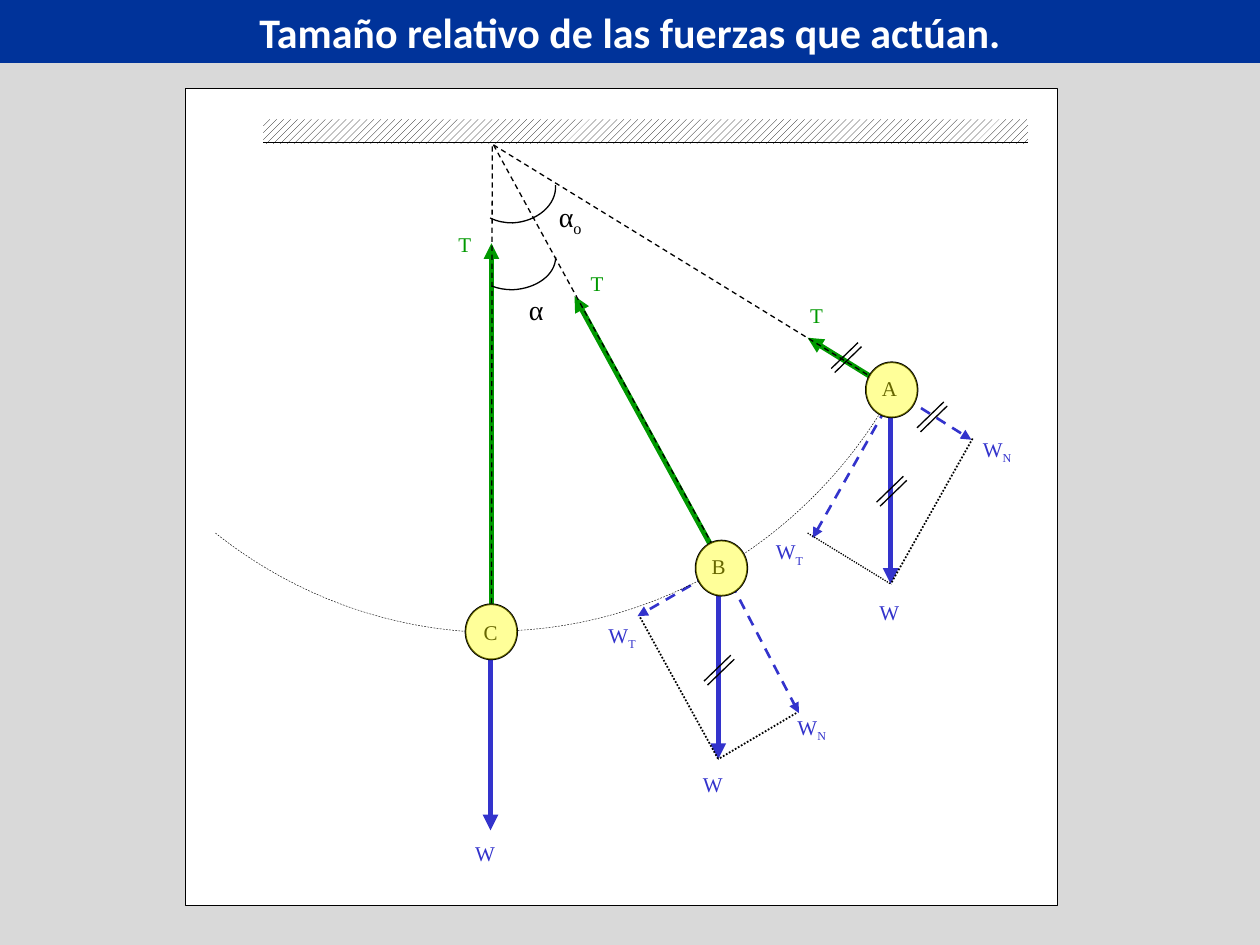
from copy import deepcopy
from dataclasses import dataclass

from lxml import etree
from pptx import Presentation
from pptx import util as u
from pptx.dml.color import RGBColor
from pptx.enum import dml, shapes, text
from pptx.oxml.ns import qn

COLORS = {
    "background": "D9D9D9",
    "banner": "00339A",
    "paper": "FFFFFF",
    "ink": "000000",
    "weight": "3333CC",
    "tension": "009900",
    "ball": "FFFF00",
}
SERIF = "Times New Roman"
DASH = dml.MSO_LINE.DASH
DOT = dml.MSO_LINE.ROUND_DOT
Point = tuple[float, float]


@dataclass
class Segment:
    start: Point
    end: Point
    color: str = "ink"
    width: float = 0.75
    dash: dml.MSO_LINE | None = None
    arrow: bool = False


@dataclass
class Label:
    left: float
    top: float
    base: str
    color: str
    subscript: str = ""
    size: float = 12


@dataclass
class Ball:
    left: float
    top: float
    label: Label


@dataclass
class Sector:
    apex: Point
    arc: list[Point]
    width: float = 0.75
    dash: dml.MSO_LINE | None = None


def force(start: Point, end: Point, color: str) -> Segment:
    return Segment(start, end, color, 3, arrow=True)


def component(start: Point, end: Point) -> Segment:
    return Segment(start, end, "weight", 1.5, DASH, True)


PIVOT = (282, 82.8)
A, B, C = (508.5, 222), (413, 324), (280.8, 360)
TIP_A, TIP_B = (509, 333.7), (410.4, 433.8)

FORCES = [
    force((509, 222.5), TIP_A, "weight"),
    force((410.4, 325.4), TIP_B, "weight"),
    force((280.3, 362), (280.3, 474.5), "weight"),
    force(A, (461.5, 193), "tension"),
    force(B, (328.3, 169.2), "tension"),
    force(C, (280.8, 139), "tension"),
    component(A, (555.1, 251.3)),
    component((511.2, 224.6), (464.4, 307.4)),
    component(B, (456.5, 407.5)),
    component(B, (364.3, 352.1)),
]
GUIDES = [
    Segment((461.5, 304.6), TIP_A, dash=DOT),
    Segment((555.8, 250.6), TIP_A, width=1, dash=DOT),
    Segment((455, 407.5), TIP_B, width=1, dash=DOT),
    Segment((365.8, 352.8), TIP_B, width=1, dash=DOT),
    Segment(PIVOT, A, dash=DASH),
    Segment(PIVOT, (414, 324), dash=DASH),
    Segment(C, (281.3, 82.8), dash=DASH),
    Segment((150.5, 81.4), (587.5, 81.4)),
]
LABELS = [
    Label(495.4, 339.1, "W", "weight"),
    Label(394.6, 437.3, "W", "weight"),
    Label(264.4, 476.6, "W", "weight"),
    Label(436.3, 304.4, "W", "weight", "T"),
    Label(554.6, 245.8, "W", "weight", "N"),
    Label(448.6, 404.6, "W", "weight", "N"),
    Label(340.6, 352.1, "W", "weight", "T"),
    Label(330.5, 151.2, "T", "tension"),
    Label(254.9, 128.9, "T", "tension"),
    Label(455.8, 169.2, "T", "tension"),
    Label(312.3, 110.7, "α", "ink", "o", 16),
    Label(295.2, 163.4, "α", "ink", size=16),
]
BALLS = [
    Ball(494.8, 207, Label(496.8, 211, "A", "ink")),
    Ball(397.5, 308.9, Label(399.6, 312.5, "B", "ink")),
    Ball(266, 345.3, Label(269.3, 350.6, "C", "ink")),
]
SECTORS = [
    Sector((283.7, 82.1), [(123.1, 304.6), (169.2, 341.3), (226.1, 361.4), (283.7, 361.4)],
           0.25, DASH),
    Sector((281.5, 82.1), [(281.5, 360.7), (375.1, 360.7), (462.2, 308.9), (509.8, 224.6)],
           0.25, DASH),
    Sector((292.3, 106.6), [(317.5, 105.8), (318.2, 117.4), (306.7, 126.7), (293, 127.4),
                            (288.7, 127.4), (284.4, 126.7), (280.1, 124.6)]),
    Sector((293, 147.6), [(317.5, 146.9), (317.5, 157), (306.7, 164.9), (293, 165.6),
                          (288.7, 165.6), (284.4, 164.9), (280.8, 163.4)]),
]
TICKS = [(490.3, 195.8), (539.3, 229.7), (516.2, 272.2), (417.6, 374.4)]


def rgb(name: str) -> RGBColor:
    return RGBColor.from_string(COLORS[name])


def style_line(line, color: str, width: float, dash=None) -> None:
    line.color.rgb = rgb(color)
    line.width = u.Pt(width)
    if dash is not None:
        line.dash_style = dash


def draw_segment(slide, segment: Segment) -> None:
    ends = [u.Pt(value) for value in (*segment.start, *segment.end)]
    connector = slide.shapes.add_connector(shapes.MSO_CONNECTOR.STRAIGHT, *ends)
    style_line(connector.line, segment.color, segment.width, segment.dash)
    properties = connector._element.spPr
    if segment.arrow:
        etree.SubElement(properties.find(qn("a:ln")), qn("a:tailEnd"), type="triangle")
    etree.SubElement(properties, qn("a:effectLst"))


def draw_label(slide, label: Label) -> None:
    box = slide.shapes.add_textbox(u.Pt(label.left), u.Pt(label.top), u.Pt(50), u.Pt(37.5))
    box.text_frame.word_wrap = True
    paragraph = box.text_frame.paragraphs[0]
    paragraph.font.name = SERIF
    paragraph.font.size = u.Pt(label.size)
    paragraph.font.color.rgb = rgb(label.color)
    paragraph.add_run().text = label.base
    if label.subscript:
        run = paragraph.add_run()
        run.text = label.subscript
        run.font._element.set("baseline", "-25000")


def draw_shape(slide, kind, left: float, top: float, width: float, height: float,
               fill: str, outline: float = 0):
    shape = slide.shapes.add_shape(kind, u.Pt(left), u.Pt(top), u.Pt(width), u.Pt(height))
    shape.shadow.inherit = False
    shape.fill.solid()
    shape.fill.fore_color.rgb = rgb(fill)
    if outline:
        style_line(shape.line, "ink", outline)
    else:
        shape.line.fill.background()
    return shape


def draw_ball(slide, ball: Ball) -> None:
    oval = shapes.MSO_SHAPE.OVAL
    draw_shape(slide, oval, ball.left, ball.top, 29.5, 31.5, "paper", 1)
    draw_label(slide, ball.label)
    tint = draw_shape(slide, oval, ball.left, ball.top, 29.5, 31.5, "ball")
    color = tint._element.spPr.find(qn("a:solidFill"))[0]
    etree.SubElement(color, qn("a:alpha"), val="40000")


def draw_sector(slide, sector: Sector) -> None:
    start, *rest = [(u.Pt(x), u.Pt(y)) for x, y in (*sector.arc, sector.apex)]
    builder = slide.shapes.build_freeform(*start)
    builder.add_line_segments(rest, close=True)
    shape = builder.convert_to_shape()
    shape.shadow.inherit = False
    shape.fill.background()
    style_line(shape.line, "ink", sector.width, sector.dash)

    outline = next(shape._element.iter(qn("a:path")))
    *controls, radius = outline.findall(qn("a:lnTo"))
    for first in range(0, len(controls), 3):
        bend = etree.Element(qn("a:cubicBezTo"))
        controls[first].addprevious(bend)
        for control in controls[first:first + 3]:
            bend.append(control[0])
            outline.remove(control)
    wedge = deepcopy(outline)
    wedge.set("stroke", "0")
    outline.addnext(wedge)
    outline.set("fill", "none")
    outline.remove(radius)
    outline.remove(outline.find(qn("a:close")))


def draw_title(slide, wording: str) -> None:
    title = slide.shapes.title
    title.left, title.top, title.width, title.height = 0, 0, u.Pt(720), u.Pt(36)
    title.fill.solid()
    title.fill.fore_color.rgb = rgb("banner")
    frame = title.text_frame
    frame.text = wording
    frame.auto_size = text.MSO_AUTO_SIZE.NONE
    frame.vertical_anchor = text.MSO_ANCHOR.MIDDLE
    paragraph = frame.paragraphs[0]
    paragraph.alignment = text.PP_ALIGN.CENTER
    paragraph.font.name = "Calibri"
    paragraph.font.size = u.Pt(24)
    paragraph.font.bold = True
    paragraph.font.color.rgb = rgb("paper")


def main() -> None:
    presentation = Presentation()
    presentation.slide_width, presentation.slide_height = u.Pt(720), u.Pt(540)
    slide = presentation.slides.add_slide(presentation.slide_layouts[5])
    slide.background.fill.solid()
    slide.background.fill.fore_color.rgb = rgb("background")
    draw_title(slide, "Tamaño relativo de las fuerzas que actúan.")
    rectangle = shapes.MSO_SHAPE.RECTANGLE
    draw_shape(slide, rectangle, 106, 50.4, 498.5, 467, "paper", 0.75)
    ceiling = draw_shape(slide, rectangle, 150.5, 68.2, 437, 14, "paper")
    ceiling.fill.patterned()
    ceiling.fill.pattern = dml.MSO_PATTERN.WIDE_UPWARD_DIAGONAL
    ceiling.fill.fore_color.rgb = rgb("ink")
    ceiling.fill.back_color.rgb = rgb("paper")
    for segment in FORCES + GUIDES:
        draw_segment(slide, segment)
    for sector in SECTORS:
        draw_sector(slide, sector)
    for label in LABELS:
        draw_label(slide, label)
    for ball in BALLS:
        draw_ball(slide, ball)
    for x, y in TICKS:
        for dx, dy in ((0, 0), (2, 2.3)):
            draw_segment(slide, Segment((x + dx, y + dy), (x + dx - 15.3, y + dy + 14.8)))
    presentation.save("out.pptx")


if __name__ == "__main__":
    main()
